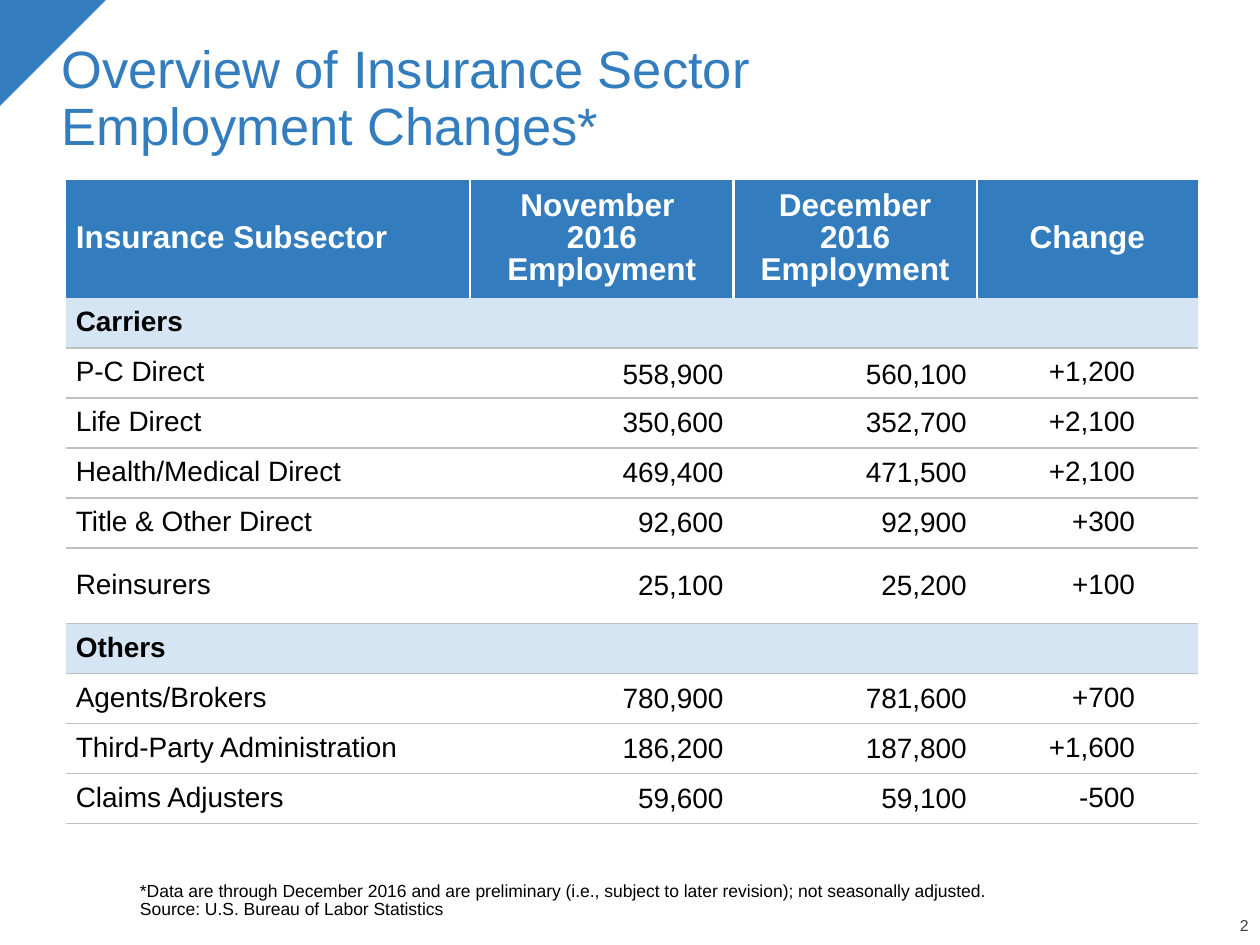
from lxml import etree
from pptx import Presentation
from pptx.dml.color import RGBColor
from pptx.enum.shapes import MSO_SHAPE
from pptx.enum.text import MSO_ANCHOR, PP_ALIGN
from pptx.oxml.ns import qn
from pptx.util import Pt

LEFT, MID, RIGHT = PP_ALIGN.LEFT, PP_ALIGN.CENTER, PP_ALIGN.RIGHT
MIDDLE, BOTTOM = MSO_ANCHOR.MIDDLE, MSO_ANCHOR.BOTTOM
FONT, BLUE, PALE, GREY = "Arial", "337DBE", "D5E5F4", "BFBFBF"
WHITE, BLACK, DARK = "FFFFFF", "000000", "404040"

TITLE = ["Overview of Insurance Sector ", "Employment Changes*"]
NOTE = [
    "*Data are through December 2016 and are preliminary "
    "(i.e., subject to later revision); not seasonally adjusted.",
    "Source: U.S. Bureau of Labor Statistics",
]
# Each heading is a list of paragraphs, each paragraph a list of lines
HEADS = [
    [["Insurance Subsector"]],
    [["November ", "2016"], ["Employment"]],
    [["December", "2016"], ["Employment"]],
    [["Change"]],
]
ROWS = [
    ["Carriers"],
    ["P-C Direct", "558,900", "560,100", "+1,200"],
    ["Life Direct", "350,600", "352,700", "+2,100"],
    ["Health/Medical Direct", "469,400", "471,500", "+2,100"],
    ["Title & Other Direct", "92,600", "92,900", "+300"],
    ["Reinsurers", "25,100", "25,200", "+100"],
    ["Others"],
    ["Agents/Brokers", "780,900", "781,600", "+700"],
    ["Third-Party Administration", "186,200", "187,800", "+1,600"],
    ["Claims Adjusters", "59,600", "59,100", "-500"],
]
WIDTHS = [231.1, 150.5, 139, 126.4]
HEAD_H, ROW_H, TALL_H = 64, 27.85, 43.2


def rgb(code):
    return RGBColor.from_string(code)


def write(para, lines, size, color, bold=False, align=LEFT, space=0.9):
    para.alignment, para.line_spacing = align, space
    for i, line in enumerate(lines):
        if i:
            para.add_line_break()
        run = para.add_run()
        run.text = line
        font = run.font
        font.name, font.size, font.bold = FONT, Pt(size), bold
        font.color.rgb = rgb(color)


def set_frame(frame, inset=None):
    frame.word_wrap, frame.vertical_anchor = True, BOTTOM
    if inset is not None:
        frame.margin_left = frame.margin_right = Pt(inset)
        frame.margin_top = frame.margin_bottom = Pt(inset)


def add_box(slide, *place):
    frame = slide.shapes.add_textbox(*map(Pt, place)).text_frame
    set_frame(frame, 0)
    return frame.paragraphs[0]


def edge(cell, side, color=None, width=1):
    """Draw one border; call for L, R, T, B in that order, before the fill."""
    line = etree.SubElement(cell._tc.get_or_add_tcPr(), qn("a:ln" + side))
    if color is None:
        etree.SubElement(line, qn("a:noFill"))
        return
    line.set("w", str(Pt(width)))
    fill = etree.SubElement(line, qn("a:solidFill"))
    etree.SubElement(fill, qn("a:srgbClr"), val=color)


def dress(cell, borders, fill=None, right=5.76):
    cell.vertical_anchor = MIDDLE
    cell.margin_left, cell.margin_right = Pt(5.76), Pt(right)
    cell.margin_top = cell.margin_bottom = Pt(4.7)
    for side in "LRTB":
        edge(cell, side, *borders.get(side, ()))
    if fill:
        cell.fill.solid()
        cell.fill.fore_color.rgb = rgb(fill)
    else:
        cell.fill.background()


def fill_head(table):
    last = len(HEADS) - 1
    rule = (WHITE, 1.5)
    for c, paras in enumerate(HEADS):
        cell = table.cell(0, c)
        borders = {}
        if c > 0:
            borders["L"] = rule
        if c < last:
            borders["R"] = rule
        dress(cell, borders, BLUE)
        frame = cell.text_frame
        for i, lines in enumerate(paras):
            para = frame.add_paragraph() if i else frame.paragraphs[0]
            write(para, lines, 18, WHITE, True, MID if c else LEFT)


def fill_row(table, r, row):
    section = len(row) == 1
    borders = {"B": (GREY, 1)}
    if r > 1:
        borders["T"] = (GREY, 1)
    for c in range(len(WIDTHS)):
        cell = table.cell(r, c)
        change = c == len(WIDTHS) - 1
        dress(cell, borders, PALE if section else None,
              36 if change and not section else 5.76)
        para = cell.text_frame.paragraphs[0]
        if c < len(row):
            write(para, [row[c]], 16, BLACK, section, RIGHT if c else LEFT,
                  0.9 if c == 0 or change else 1.0)
        else:  # keeps an empty cell from stretching its row
            etree.SubElement(para._p, qn("a:endParaRPr"), sz="1600")
    if r == 2:
        for c in (1, 2):
            table.cell(r, c).vertical_anchor = BOTTOM


def add_grid(slide):
    heights = [HEAD_H] + [TALL_H if row[0] == "Reinsurers" else ROW_H
                          for row in ROWS]
    table = slide.shapes.add_table(
        len(heights), len(WIDTHS), Pt(37.6), Pt(102.6),
        Pt(sum(WIDTHS)), Pt(sum(heights))).table
    table.first_row = table.horz_banding = False
    for col, width in zip(table.columns, WIDTHS):
        col.width = Pt(width)
    for row, height in zip(table.rows, heights):
        row.height = Pt(height)
    fill_head(table)
    for r, row in enumerate(ROWS, 1):
        fill_row(table, r, row)


def main():
    deck = Presentation()
    deck.slide_width, deck.slide_height = Pt(720), Pt(540)
    slide = deck.slides.add_slide(deck.slide_layouts[5])

    corner = slide.shapes.add_shape(
        MSO_SHAPE.RIGHT_TRIANGLE, 0, 0, Pt(60.5), Pt(60.5))
    corner.rotation = 90
    corner.shadow.inherit = False
    corner.fill.solid()
    corner.fill.fore_color.rgb = rgb(BLUE)
    corner.line.fill.background()

    title = slide.shapes.title
    title.left, title.top = Pt(28), Pt(18)
    title.width, title.height = Pt(666), Pt(75)
    set_frame(title.text_frame)
    write(title.text_frame.paragraphs[0], TITLE, 30, BLUE)
    # Brings the title in front of the corner
    slide.shapes._spTree.append(title._element)

    write(add_box(slide, 80, 493.2, 605, 32.4), NOTE, 10, BLACK)
    add_grid(slide)
    write(add_box(slide, 679, 525, 34.5, 9.4), ["2"], 9, DARK, align=RIGHT)
    deck.save("out.pptx")


if __name__ == "__main__":
    main()
